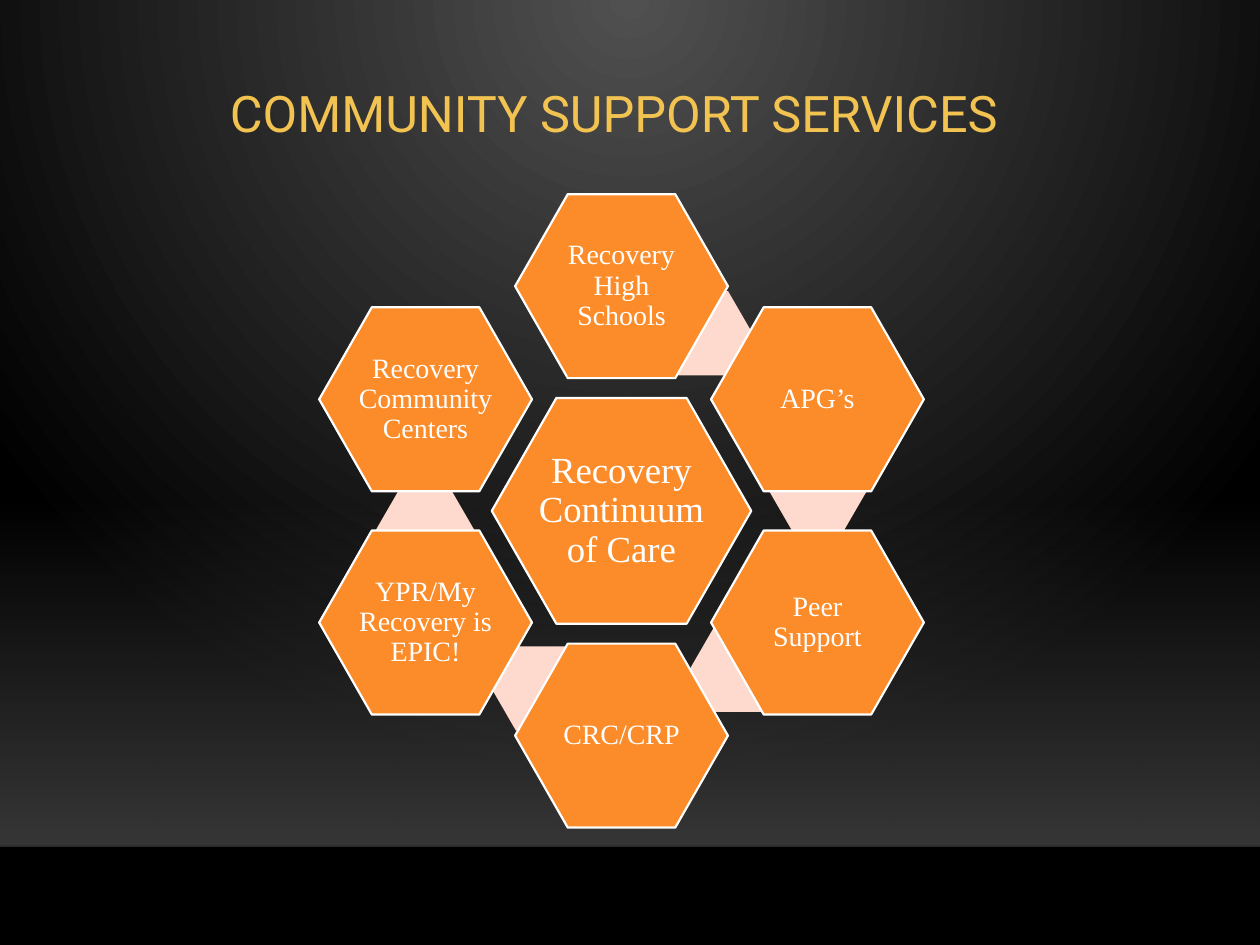
import pptx
import pptx.util
import pptx.dml.color
import pptx.enum.shapes
import pptx.enum.text
import pptx.oxml
import pptx.oxml.ns
from lxml import etree

Cm, Pt = pptx.util.Cm, pptx.util.Pt
SHAPES = pptx.enum.shapes.MSO_SHAPE
qn = pptx.oxml.ns.qn

TITLE = "COMMUNITY SUPPORT SERVICES "
HUB = "Recovery Continuum of Care"
SERVICES = [
    ("Recovery High Schools", 0, -4.53),
    ("APG’s", 3.95, -2.25),
    ("Peer Support", 3.95, 2.25),
    ("CRC/CRP", 0, 4.53),
    ("YPR/My Recovery is EPIC!", -3.95, 2.25),
    ("Recovery Community Centers", -3.95, -2.25),
]
LINKS = [(1.65, -3.58), (3.96, -0.41), (2.36, 3.2), (-1.63, 3.58), (-3.96, 0.38)]

COLORS = {
    "glow": "505050", "dark": "000000", "floor": "454545", "edge": "000001",
    "title": "F2C351", "hexagon": "FB8C29", "link": "FDDACD", "text": "FFFFFF",
}
CENTER = (12.53, 10.3)
HUB_SIZE, SERVICE_SIZE, LINK_SIZE = (5.23, 4.55), (4.29, 3.71), (1.98, 1.7)
HORIZON = 17.06


def rgb(name):
    return pptx.dml.color.RGBColor.from_string(COLORS[name])


def set_alpha(color_element, percent):
    etree.SubElement(color_element, qn("a:alpha")).set("val", str(percent * 1000))


def set_gradient(fill, start, end):
    fill.gradient()
    for stop, name, position in zip(fill.gradient_stops, (start, end), (0, 1)):
        stop.color.rgb = rgb(name)
        stop.position = position


def write(shape, text, font, size, color, inset):
    frame = shape.text_frame
    frame.text = text
    margins = {f"margin_{side}": Cm(inset) for side in ("left", "right", "top", "bottom")}
    frame_format = {
        "word_wrap": True,
        "auto_size": pptx.enum.text.MSO_AUTO_SIZE.NONE,
        "vertical_anchor": pptx.enum.text.MSO_ANCHOR.MIDDLE,
        **margins,
    }
    for key, value in frame_format.items():
        setattr(frame, key, value)
    paragraph = frame.paragraphs[0]
    paragraph.alignment = pptx.enum.text.PP_ALIGN.CENTER
    paragraph.line_spacing = 0.9
    run_font = paragraph.runs[0].font
    for key, value in {"name": font, "size": Pt(size), "bold": False}.items():
        setattr(run_font, key, value)
    run_font.color.rgb = rgb(color)


def add_hexagon(slide, dx, dy, size, color, adjustment):
    width, height = size
    left, top = CENTER[0] + dx - width / 2, CENTER[1] + dy - height / 2
    hexagon = slide.shapes.add_shape(
        SHAPES.HEXAGON, Cm(left), Cm(top), Cm(width), Cm(height))
    hexagon.shadow.inherit = False
    hexagon.adjustments[0] = adjustment
    hexagon.fill.solid()
    hexagon.fill.fore_color.rgb = rgb(color)
    hexagon.line.fill.background()
    return hexagon


def add_labelled_hexagon(slide, text, dx, dy, size, font_size, inset):
    hexagon = add_hexagon(slide, dx, dy, size, "hexagon", 0.286)
    hexagon.line.color.rgb = rgb("text")
    hexagon.line.width = Pt(1.25)
    write(hexagon, text, "Times New Roman", font_size, "text", inset)


def add_backdrop(slide, page_width):
    set_gradient(slide.background.fill, "glow", "dark")
    gradient = slide.element.find(".//" + qn("p:bgPr")).find(qn("a:gradFill"))
    gradient.remove(gradient.find(qn("a:lin")))
    circle = etree.SubElement(gradient, qn("a:path"), {"path": "circle"})
    etree.SubElement(circle, qn("a:fillToRect"),
                     {"l": "43000", "t": "0", "r": "43000", "b": "100000"})

    floor = slide.shapes.add_shape(
        SHAPES.RECTANGLE, 0, Cm(10.06), page_width, Cm(HORIZON - 10.06))
    floor.shadow.inherit = False
    floor.line.fill.background()
    set_gradient(floor.fill, "floor", "floor")
    floor.fill.gradient_angle = 270
    floor_colors = floor.element.spPr.findall(".//" + qn("a:srgbClr"))
    for color_element, percent in zip(floor_colors, (0, 80)):
        set_alpha(color_element, percent)

    horizon = slide.shapes.add_connector(
        pptx.enum.shapes.MSO_CONNECTOR.STRAIGHT, 0, Cm(HORIZON), page_width, Cm(HORIZON))
    horizon.line.color.rgb = rgb("edge")
    horizon.line.width = Pt(1)
    horizon_properties = horizon.element.spPr
    set_alpha(horizon_properties.find(".//" + qn("a:srgbClr")), 20)
    etree.SubElement(horizon_properties, qn("a:effectLst"))


def main():
    deck = pptx.Presentation()
    deck.slide_width, deck.slide_height = Cm(25.4), Cm(19.05)
    slide = deck.slides.add_slide(deck.slide_layouts[5])
    add_backdrop(slide, deck.slide_width)

    title = slide.shapes.title
    title_place = {"left": 2.51, "top": 1.27, "width": 19.99, "height": 2.16}
    for key, value in title_place.items():
        setattr(title, key, Cm(value))
    write(title, TITLE, "Roboto", 28.8, "title", 0.2)

    add_labelled_hexagon(slide, HUB, 0, 0, HUB_SIZE, 21, 0.07)
    for dx, dy in LINKS:
        add_hexagon(slide, dx, dy, LINK_SIZE, "link", 0.289)
    for text, dx, dy in SERVICES:
        add_labelled_hexagon(slide, text, dx, dy, SERVICE_SIZE, 16, 0.05)

    deck.save("out.pptx")


if __name__ == "__main__":
    main()
